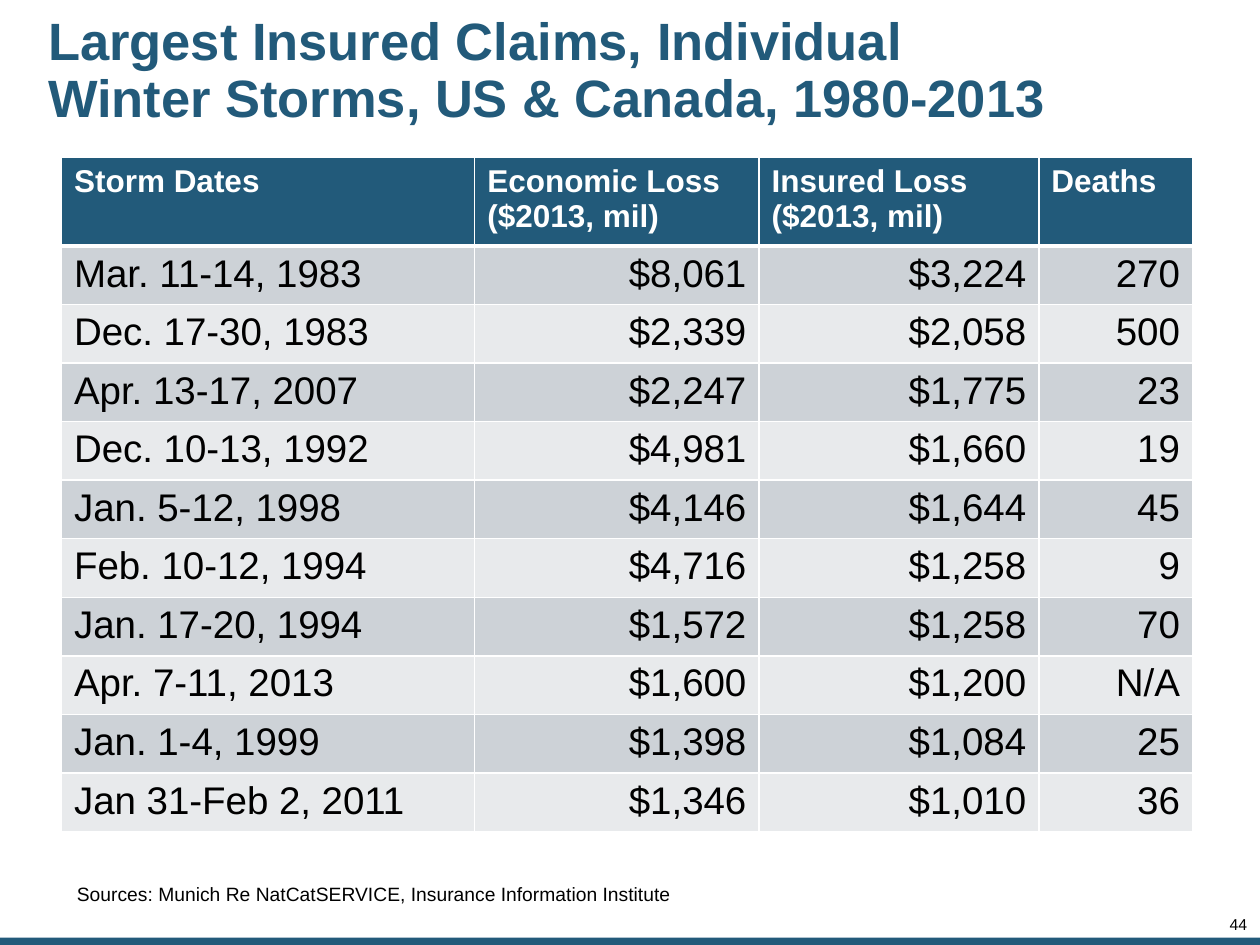
from lxml import etree
from pptx import Presentation
from pptx.dml.color import RGBColor
from pptx.enum.shapes import MSO_SHAPE
from pptx.enum.text import MSO_ANCHOR, MSO_AUTO_SIZE, PP_ALIGN
from pptx.oxml.ns import qn
from pptx.util import Cm, Pt

LEFT, RIGHT = PP_ALIGN.LEFT, PP_ALIGN.RIGHT
MIDDLE, TOP = MSO_ANCHOR.MIDDLE, MSO_ANCHOR.TOP
FIXED = MSO_AUTO_SIZE.NONE
RECT = MSO_SHAPE.RECTANGLE

# Content
TITLE = "Largest Insured Claims, Individual Winter Storms, US & Canada, 1980-2013"
SOURCE = "Sources: Munich Re NatCatSERVICE, Insurance Information Institute"
PAGE = "44"
STORMS = [
    ("Storm Dates", "Economic Loss ($2013, mil)", "Insured Loss ($2013, mil)", "Deaths"),
    ("Mar. 11-14, 1983", "$8,061", "$3,224", "270"),
    ("Dec. 17-30, 1983", "$2,339", "$2,058", "500"),
    ("Apr. 13-17, 2007", "$2,247", "$1,775", "23"),
    ("Dec. 10-13, 1992", "$4,981", "$1,660", "19"),
    ("Jan. 5-12, 1998", "$4,146", "$1,644", "45"),
    ("Feb. 10-12, 1994", "$4,716", "$1,258", "9"),
    ("Jan. 17-20, 1994", "$1,572", "$1,258", "70"),
    ("Apr. 7-11, 2013", "$1,600", "$1,200", "N/A"),
    ("Jan. 1-4, 1999", "$1,398", "$1,084", "25"),
    ("Jan 31-Feb 2, 2011", "$1,346", "$1,010", "36"),
]

# Formats and sizes, in cm
BLUE, WHITE, BLACK = "225A7A", "FFFFFF", "000000"
BANDS = ("E8EAEC", "CDD2D7")
HEAD = {"size": Pt(18), "bold": True}
BODY = {"size": Pt(22), "bold": False}
WIDTHS = (8.33, 5.73, 5.64, 3.1)
HEAD_H, ROW_H = 1.78, 1.18


def color(code):
    return RGBColor.from_string(code)


def paint(item, code):
    item.fill.solid()
    item.fill.fore_color.rgb = color(code)


def write(frame, text, tint, look, align=LEFT, space=None):
    para = frame.paragraphs[0]
    para.alignment = align
    if space:
        para.line_spacing = space
    run = para.add_run()
    run.text = text
    run.font.name = "Arial"
    run.font.color.rgb = color(tint)
    for key, value in look.items():
        setattr(run.font, key, value)


def setup(frame, pad, anchor=TOP):
    side, edge = pad
    look = {"word_wrap": True, "auto_size": FIXED, "vertical_anchor": anchor,
            "margin_left": Cm(side), "margin_right": Cm(side),
            "margin_top": Cm(edge), "margin_bottom": Cm(edge)}
    for key, value in look.items():
        setattr(frame, key, value)


def border(cell, widths):
    props = cell._tc.get_or_add_tcPr()
    for side, width in widths.items():
        line = etree.SubElement(props, qn("a:ln" + side), w=str(Pt(width)))
        fill = etree.SubElement(line, qn("a:solidFill"))
        etree.SubElement(fill, qn("a:srgbClr"), val=WHITE)


deck = Presentation()
deck.slide_width, deck.slide_height = Cm(25.4), Cm(19.05)
slide = deck.slides.add_slide(deck.slide_layouts[5])
shapes = slide.shapes

# Bottom bar
bar = shapes.add_shape(RECT, 0, Cm(18.9), deck.slide_width, Cm(0.15))
bar.shadow.inherit = False
paint(bar, BLUE)
bar.line.fill.background()

# Title
title = shapes.title
title.left, title.top, title.width, title.height = Cm(0.84), Cm(0.25), Cm(20.55), Cm(2.39)
setup(title.text_frame, (0.13, 0.13), MIDDLE)
write(title.text_frame, TITLE, BLUE, {"size": Pt(30), "bold": True}, space=0.9)

# Storm table
high = HEAD_H + ROW_H * (len(STORMS) - 1)
table = shapes.add_table(len(STORMS), len(WIDTHS), Cm(1.24), Cm(3.18),
                         Cm(sum(WIDTHS)), Cm(high)).table
for col, width in zip(table.columns, WIDTHS):
    col.width = Cm(width)
for r, storm in enumerate(STORMS):
    top = r == 0
    table.rows[r].height = Cm(HEAD_H if top else ROW_H)
    for c, text in enumerate(storm):
        cell = table.cell(r, c)
        border(cell, {"L": 1, "R": 1, "T": 3 if r == 1 else 1, "B": 3 if top else 1})
        paint(cell, BLUE if top else BANDS[r % 2])
        write(cell.text_frame, text, WHITE if top else BLACK, HEAD if top else BODY,
              LEFT if top or c == 0 else RIGHT)

# Page number and source line
NOTES = [
    (PAGE, (23.9, 18.49, 1.24, 0.33), (0, 0), 9, RIGHT, 0.85),
    (SOURCE, (1.3, 17.65, 22.6, 0.74), (0.25, 0.13), 11, LEFT, None),
]
for text, place, pad, size, align, space in NOTES:
    frame = shapes.add_textbox(*map(Cm, place)).text_frame
    setup(frame, pad)
    write(frame, text, BLACK, {"size": Pt(size)}, align, space)

deck.save("out.pptx")
